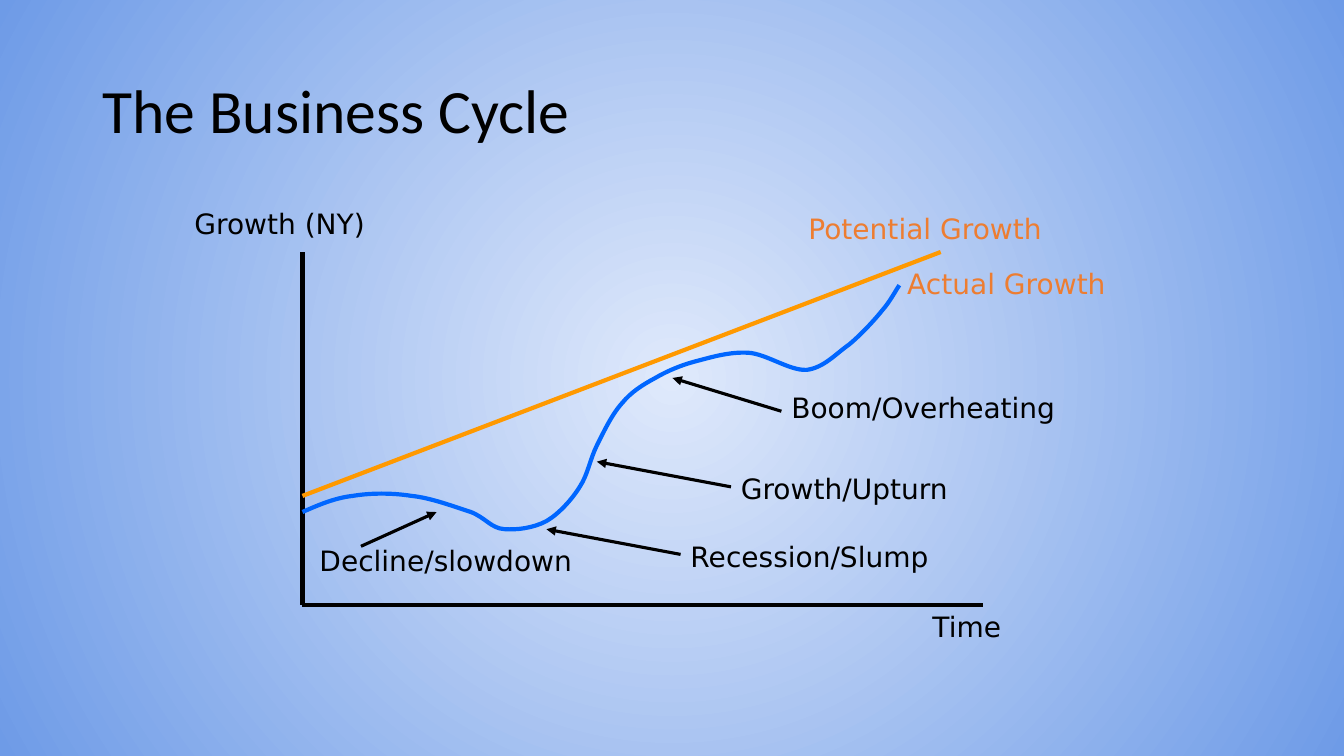
from lxml.etree import SubElement
from pptx import Presentation
from pptx.dml.color import RGBColor
from pptx.enum.shapes import MSO_CONNECTOR
from pptx.enum.text import MSO_ANCHOR
from pptx.oxml.ns import qn
from pptx.util import Pt

PX = 9144  # EMU per px, 100 px to the inch
BLACK = RGBColor(0x00, 0x00, 0x00)
ORANGE = RGBColor(0xFF, 0x99, 0x00)
RUST = RGBColor(0xED, 0x7D, 0x31)
BLUE = RGBColor(0x00, 0x66, 0xFF)
BG_INNER = RGBColor(0xDF, 0xE9, 0xFB)
BG_OUTER = RGBColor(0x6E, 0x9B, 0xE7)

TITLE = {"name": "Calibri", "size": Pt(44)}
LABEL = {"name": "DejaVu Sans", "size": Pt(20)}

# Axis and trend labels: text, left, top, width, colour
LABELS = [
    ("Growth (NY)", 183, 200, 194, BLACK),
    ("Time", 915, 600, 89, BLACK),
    ("Potential Growth", 792, 205, 253, RUST),
    ("Actual Growth", 890, 259, 217, RUST),
]
# Phases: text, left, top, width, arrow start, arrow tip
PHASES = [
    ("Recession/Slump", 675, 530, 259, (675, 550), (542, 525)),
    ("Growth/Upturn", 725, 463, 230, (725, 483), (592, 458)),
    ("Boom/Overheating", 775, 383, 300, (775, 408), (667, 375)),
    ("Decline/slowdown", 307, 534, 278, (358, 542), (433, 508)),
]
# Actual growth: start, then two control points and an end per curve
CURVE_START = (300, 508)
CURVES = [
    [(316, 501), (332, 494), (350, 492)],
    [(368, 489), (389, 489), (408, 492)],
    [(428, 494), (451, 503), (467, 508)],
    [(482, 514), (487, 524), (500, 525)],
    [(512, 526), (529, 524), (542, 517)],
    [(554, 510), (567, 496), (575, 483)],
    [(583, 471), (585, 456), (592, 442)],
    [(599, 428), (607, 411), (617, 400)],
    [(626, 389), (637, 382), (650, 375)],
    [(662, 368), (676, 362), (692, 358)],
    [(707, 354), (724, 349), (742, 350)],
    [(760, 351), (783, 368), (800, 367)],
    [(817, 365), (829, 351), (842, 342)],
    [(854, 332), (867, 318), (875, 308)],
    [(883, 299), (889, 287), (892, 283)],
]


def set_background(s):
    fill = s.background.fill
    fill.gradient()
    for stop, color in zip(fill.gradient_stops, (BG_INNER, BG_OUTER)):
        stop.color.rgb = color
    # Radial gradient from the slide centre
    grad = s._element.xpath(".//p:bg//a:gradFill")[0]
    grad.remove(grad.find(qn("a:lin")))
    radial = SubElement(grad, qn("a:path"), {"path": "circle"})
    SubElement(radial, qn("a:fillToRect"), dict.fromkeys("ltrb", "50000"))


def add_text(s, text, x, y, w, h=43, color=BLACK, fmt=LABEL):
    sp = s.shapes.add_textbox(x * PX, y * PX, w * PX, h * PX)
    tf = sp.text_frame
    tf.word_wrap = True
    p = tf.paragraphs[0]
    r = p.add_run()
    r.text = text
    for key, value in fmt.items():
        setattr(r.font, key, value)
    r.font.color.rgb = color
    return tf


def add_line(s, start, end, color=BLACK, width=3, arrow=False):
    ends = [v * PX for v in (*start, *end)]
    sp = s.shapes.add_connector(MSO_CONNECTOR.STRAIGHT, *ends)
    sp.line.color.rgb = color
    sp.line.width = Pt(width)
    if arrow:
        SubElement(sp.line._get_or_add_ln(), qn("a:tailEnd"), {"type": "triangle"})
    SubElement(sp._element.spPr, qn("a:effectLst"))


def add_curve(s, start, curves, color):
    fb = s.shapes.build_freeform(*start, scale=PX)
    fb.add_line_segments([pt for curve in curves for pt in curve], close=False)
    sp = fb.convert_to_shape()
    # Turn each three line segments into one Bezier curve
    segments = sp._element.xpath(".//a:path/a:lnTo")
    for i in range(0, len(segments), 3):
        c1, c2, end = segments[i:i + 3]
        outline = c1.getparent()
        bezier = SubElement(outline, qn("a:cubicBezTo"))
        for seg in (c1, c2, end):
            bezier.append(seg[0])
            outline.remove(seg)
    sp.fill.background()
    sp.line.color.rgb = color
    sp.line.width = Pt(3)
    sp.shadow.inherit = False


def main():
    prs = Presentation()
    prs.slide_width, prs.slide_height = 1333 * PX, 750 * PX
    s = prs.slides.add_slide(prs.slide_layouts[6])
    set_background(s)

    # Title
    tf = add_text(s, "The Business Cycle", 92, 40, 1150, 145, fmt=TITLE)
    tf.vertical_anchor = MSO_ANCHOR.MIDDLE
    tf.paragraphs[0].line_spacing = 0.9

    # Axes
    add_line(s, (300, 250), (300, 600))
    add_line(s, (300, 600), (975, 600))

    # Potential and actual growth
    add_line(s, (300, 492), (933, 250), ORANGE)
    add_curve(s, CURVE_START, CURVES, BLUE)
    for text, x, y, w, color in LABELS:
        add_text(s, text, x, y, w, color=color)

    # Phases of the cycle
    for text, x, y, w, start, tip in PHASES:
        add_line(s, start, tip, width=2.25, arrow=True)
        add_text(s, text, x, y, w)

    prs.save("out.pptx")


if __name__ == "__main__":
    main()
